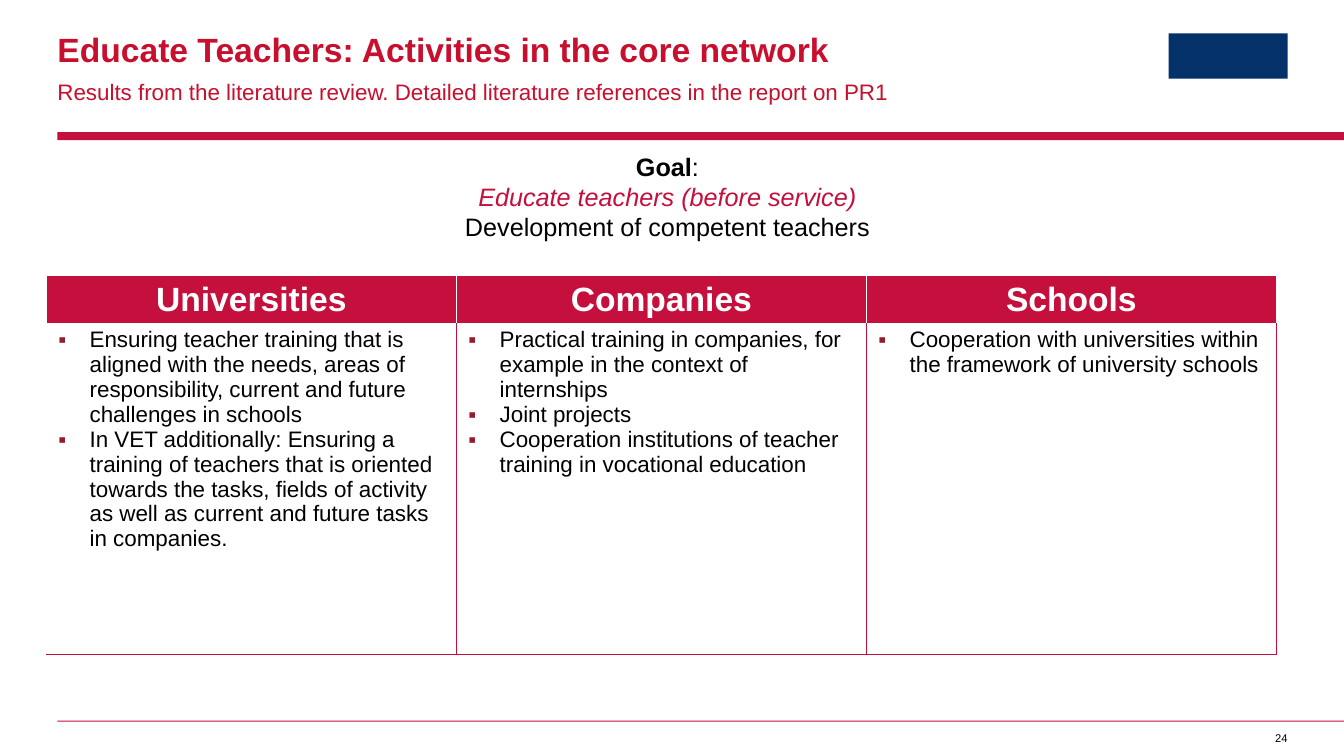
from dataclasses import dataclass

from lxml import etree
from pptx import Presentation
from pptx.dml.color import RGBColor
from pptx.enum.shapes import MSO_SHAPE
from pptx.enum.text import MSO_ANCHOR, PP_ALIGN
from pptx.oxml.ns import qn
from pptx.util import Inches, Pt

RECTANGLE = MSO_SHAPE.RECTANGLE
LEFT, CENTER, RIGHT = PP_ALIGN.LEFT, PP_ALIGN.CENTER, PP_ALIGN.RIGHT
TOP, MIDDLE = MSO_ANCHOR.TOP, MSO_ANCHOR.MIDDLE

TITLE = "Educate Teachers: Activities in the core network"
SUBTITLE = ("Results from the literature review. "
            "Detailed literature references in the report on PR1")
PAGE_NUMBER = "24"
ACTIVITIES = {
    "Universities": [
        "Ensuring teacher training that is aligned with the needs, areas of "
        "responsibility, current and future challenges in schools",
        "In VET additionally: Ensuring a training of teachers that is oriented "
        "towards the tasks, fields of activity as well as current and future "
        "tasks in companies.",
    ],
    "Companies": [
        "Practical training in companies, for example in the context of internships",
        "Joint projects",
        "Cooperation institutions of teacher training in vocational education",
    ],
    "Schools": [
        "Cooperation with universities within the framework of university schools",
    ],
}


@dataclass(frozen=True)
class Theme:
    font: str = "Arial"
    title: str = "C80F2E"
    accent: str = "C50F3C"
    bullet: str = "971B2F"
    emblem: str = "04316A"
    text: str = "000000"
    white: str = "FFFFFF"
    heading_size: int = 24
    goal_size: int = 18
    body_size: int = 16
    page_size: int = 8


THEME = Theme()

# Each goal line is a list of (text, colour, bold, italic) runs.
GOAL = [
    [("Goal", THEME.text, True, False), (":", THEME.text, False, False)],
    [("Educate teachers (before service)", THEME.accent, False, True)],
    [("Development of competent teachers", THEME.text, False, False)],
]

SLIDE_WIDTH, SLIDE_HEIGHT = 13.33, 7.5
MARGIN = 0.57
TABLE_LEFT, TABLE_TOP, TABLE_WIDTH = 0.46, 2.73, 12.2
HEADER_HEIGHT, BODY_HEIGHT = 0.46, 3.28
BULLET_INDENT = 0.31


def add_run(paragraph, text, size, color, bold=False, italic=False):
    run = paragraph.add_run()
    run.text = text
    font = run.font
    font.name, font.size = THEME.font, Pt(size)
    font.bold, font.italic = bold, italic
    font.color.rgb = RGBColor.from_string(color)


def add_text_box(slide, box, insets=(0, 0, 0, 0)):
    """Add a wrapping box; insets are left, top, right, bottom in inches."""
    frame = slide.shapes.add_textbox(*map(Inches, box)).text_frame
    frame.word_wrap = True
    (frame.margin_left, frame.margin_top,
     frame.margin_right, frame.margin_bottom) = map(Inches, insets)
    return frame


def add_block(slide, box, color):
    block = slide.shapes.add_shape(RECTANGLE, *map(Inches, box))
    block.shadow.inherit = False
    block.fill.solid()
    block.fill.fore_color.rgb = RGBColor.from_string(color)
    block.line.fill.background()


def add_bullet(paragraph):
    properties = paragraph._p.get_or_add_pPr()
    properties.set("marL", str(Inches(BULLET_INDENT)))
    properties.set("indent", str(-Inches(BULLET_INDENT)))
    color = etree.SubElement(properties, qn("a:buClr"))
    etree.SubElement(color, qn("a:srgbClr"), val=THEME.bullet)
    etree.SubElement(properties, qn("a:buFont"), typeface=THEME.font)
    etree.SubElement(properties, qn("a:buChar"), char="▪")


def set_borders(cell, borders):
    """Draw borders given as (side, colour, points), in the order L, R, T, B."""
    properties = cell._tc.get_or_add_tcPr()
    for position, (side, color, width) in enumerate(borders):
        line = etree.Element(qn(f"a:ln{side}"), w=str(Pt(width)))
        fill = etree.SubElement(line, qn("a:solidFill"))
        etree.SubElement(fill, qn("a:srgbClr"), val=color)
        properties.insert(position, line)


def format_cell(cell, anchor):
    cell.vertical_anchor = anchor
    cell.margin_left = cell.margin_right = Inches(0.12)
    cell.margin_top = cell.margin_bottom = Inches(0.04)


def add_header(slide):
    title = add_text_box(slide, (MARGIN, 0.33, 8.98, 0.36)).paragraphs[0]
    title.line_spacing = 0.9
    add_run(title, TITLE, THEME.heading_size, THEME.title, bold=True)

    subtitle = add_text_box(slide, (MARGIN, 0.75, 9.33, 0.27),
                            (0, 0, 0.39, 0)).paragraphs[0]
    subtitle.line_spacing = 1.1
    add_run(subtitle, SUBTITLE, THEME.body_size, THEME.title)

    add_block(slide, (11.59, 0.33, 1.18, 0.45), THEME.emblem)


def add_goal(slide):
    frame = add_text_box(slide, (MARGIN, 1.45, 12.1, 1.01), (0.1, 0.05, 0.1, 0.05))
    for index, runs in enumerate(GOAL):
        paragraph = frame.add_paragraph() if index else frame.paragraphs[0]
        paragraph.alignment = CENTER
        for text, color, bold, italic in runs:
            add_run(paragraph, text, THEME.goal_size, color, bold, italic)


def add_activities(slide):
    table = slide.shapes.add_table(
        2, len(ACTIVITIES), Inches(TABLE_LEFT), Inches(TABLE_TOP),
        Inches(TABLE_WIDTH), Inches(HEADER_HEIGHT + BODY_HEIGHT)).table
    table.horz_banding = False
    table.rows[0].height = Inches(HEADER_HEIGHT)
    table.rows[1].height = Inches(BODY_HEIGHT)

    for column, (partner, activities) in enumerate(ACTIVITIES.items()):
        table.columns[column].width = Inches(TABLE_WIDTH / len(ACTIVITIES))

        header = table.cell(0, column)
        format_cell(header, MIDDLE)
        header.fill.solid()
        header.fill.fore_color.rgb = RGBColor.from_string(THEME.accent)
        set_borders(header, [("L", THEME.white, 0.5), ("R", THEME.white, 0.5),
                             ("T", THEME.white, 1)])
        heading = header.text_frame.paragraphs[0]
        heading.alignment = CENTER
        add_run(heading, partner, THEME.heading_size, THEME.white, bold=True)

        body = table.cell(1, column)
        format_cell(body, TOP)
        body.fill.background()
        left = ("L", THEME.accent, 0.25) if column else ("L", THEME.white, 1)
        set_borders(body, [left, ("R", THEME.accent, 0.25), ("B", THEME.accent, 0.25)])
        frame = body.text_frame
        for index, activity in enumerate(activities):
            paragraph = frame.add_paragraph() if index else frame.paragraphs[0]
            add_bullet(paragraph)
            paragraph.alignment = LEFT
            add_run(paragraph, activity, THEME.body_size, THEME.text)


def add_page_number(slide):
    paragraph = add_text_box(slide, (12.56, 7.26, 0.21, 0.13)).paragraphs[0]
    paragraph.alignment = RIGHT
    add_run(paragraph, PAGE_NUMBER, THEME.page_size, THEME.text)


def main():
    presentation = Presentation()
    presentation.slide_width = Inches(SLIDE_WIDTH)
    presentation.slide_height = Inches(SLIDE_HEIGHT)
    slide = presentation.slides.add_slide(presentation.slide_layouts[6])

    for top, height in ((1.31, 0.08), (7.15, 0.01)):
        add_block(slide, (MARGIN, top, SLIDE_WIDTH - MARGIN, height), THEME.accent)
    add_header(slide)
    add_goal(slide)
    add_activities(slide)
    add_page_number(slide)
    presentation.save("out.pptx")


if __name__ == "__main__":
    main()
